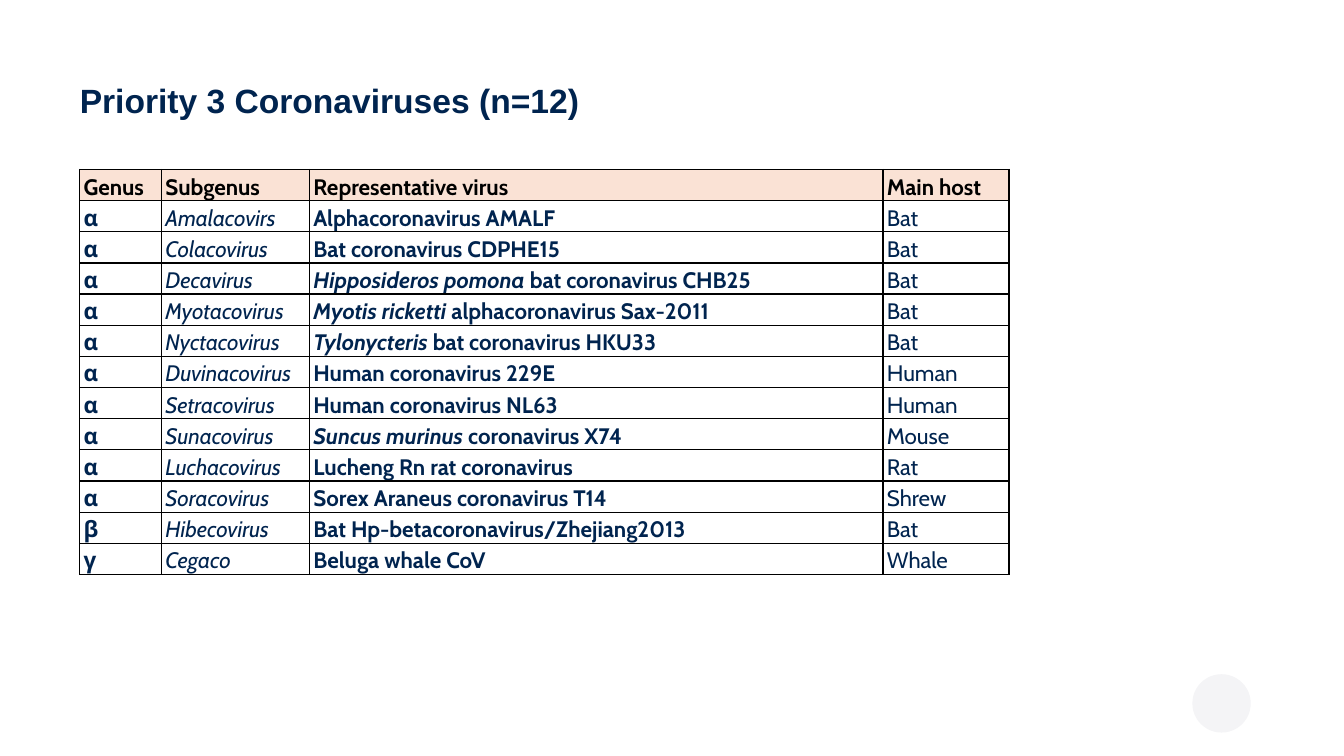
import pptx
import pptx.dml.color
import pptx.enum.shapes
import pptx.enum.text
import pptx.oxml
import pptx.oxml.ns
import pptx.util

Cm = pptx.util.Cm
Pt = pptx.util.Pt

NAVY = "00244F"
BLACK = "000000"
PEACH = "FAE2D5"
PALE_GREY = "F4F4F6"

COLUMN_WIDTHS = [2.06, 3.73, 14.45, 3.18]
HEADINGS = ["Genus", "Subgenus", "Representative virus", "Main host"]
VIRUSES = [
    ("α", "Amalacovirs", "", "Alphacoronavirus AMALF", "Bat"),
    ("α", "Colacovirus", "", "Bat coronavirus CDPHE15", "Bat"),
    ("α", "Decavirus", "Hipposideros pomona", " bat coronavirus CHB25", "Bat"),
    ("α", "Myotacovirus", "Myotis ricketti", " alphacoronavirus Sax-2011", "Bat"),
    ("α", "Nyctacovirus", "Tylonycteris", " bat coronavirus HKU33", "Bat"),
    ("α", "Duvinacovirus", "", "Human coronavirus 229E", "Human"),
    ("α", "Setracovirus", "", "Human coronavirus NL63", "Human"),
    ("α", "Sunacovirus", "Suncus murinus", " coronavirus X74", "Mouse"),
    ("α", "Luchacovirus", "", "Lucheng Rn rat coronavirus", "Rat"),
    ("α", "Soracovirus", "", "Sorex Araneus coronavirus T14", "Shrew"),
    ("β", "Hibecovirus", "", "Bat Hp-betacoronavirus/Zhejiang2013", "Bat"),
    ("γ", "Cegaco", "", "Beluga whale CoV", "Whale"),
]


def colour(value):
    return pptx.dml.color.RGBColor.from_string(value)


def write(para, text, font="Cabin", size=16, fill=NAVY, bold=False, italic=False):
    span = para.add_run()
    span.text = text
    span.font.name = font
    span.font.size = Pt(size)
    span.font.bold = bold
    span.font.italic = italic
    span.font.color.rgb = colour(fill)


class PageBuilder:
    border_colour = BLACK
    border_width = Pt(1)
    row_height = Cm(0.74)
    side_margin = Cm(0.1)

    def __init__(self, deck):
        self.page = deck.slides.add_slide(deck.slide_layouts[5])

    def title(self, text, left, top, width, height):
        box = self.page.shapes.title
        box.left, box.top, box.width, box.height = Cm(left), Cm(top), Cm(width), Cm(height)
        frame = box.text_frame
        frame.word_wrap = True
        frame.auto_size = pptx.enum.text.MSO_AUTO_SIZE.NONE
        frame.vertical_anchor = pptx.enum.text.MSO_ANCHOR.MIDDLE
        frame.margin_left = 0
        para = frame.paragraphs[0]
        para.alignment = pptx.enum.text.PP_ALIGN.LEFT
        para.line_spacing = 0.9
        para.space_after = Pt(6)
        write(para, text, font="Arial", size=24, bold=True)

    def circle(self, left, top, diameter, fill):
        kind = pptx.enum.shapes.MSO_SHAPE.OVAL
        shape = self.page.shapes.add_shape(kind, Cm(left), Cm(top), Cm(diameter), Cm(diameter))
        shape.shadow.inherit = False
        shape.fill.solid()
        shape.fill.fore_color.rgb = colour(fill)
        shape.line.fill.background()

    def table(self, left, top, column_widths, row_count):
        widths = [Cm(width) for width in column_widths]
        frame = self.page.shapes.add_table(
            row_count, len(widths), Cm(left), Cm(top), sum(widths), self.row_height * row_count
        )
        table = frame.table
        table.first_row = False
        table.horz_banding = False
        for column, width in zip(table.columns, widths):
            column.width = width
        for row in table.rows:
            row.height = self.row_height
        return table

    def cell(self, cell, fill=None):
        cell.margin_left = cell.margin_right = self.side_margin
        cell.margin_top = cell.margin_bottom = 0
        self.borders(cell)
        if fill:
            cell.fill.solid()
            cell.fill.fore_color.rgb = colour(fill)
        else:
            cell.fill.background()
        para = cell.text_frame.paragraphs[0]
        para.line_spacing = 1.15
        para.space_after = Pt(8)
        return para

    def borders(self, cell):
        properties = cell._tc.get_or_add_tcPr()
        for side in ("lnL", "lnR", "lnT", "lnB"):
            properties.append(pptx.oxml.parse_xml(
                f'<a:{side} {pptx.oxml.ns.nsdecls("a")} w="{self.border_width}">'
                f'<a:solidFill><a:srgbClr val="{self.border_colour}"/></a:solidFill></a:{side}>'
            ))


def main():
    deck = pptx.Presentation()
    deck.slide_width = Cm(33.87)
    deck.slide_height = Cm(19.05)
    builder = PageBuilder(deck)
    builder.circle(30.05, 16.99, 1.47, PALE_GREY)
    builder.title("Priority 3 Coronaviruses (n=12)", 2.01, 1.96, 29.21, 1.24)

    table = builder.table(2.01, 4.27, COLUMN_WIDTHS, len(VIRUSES) + 1)
    for column, heading in enumerate(HEADINGS):
        write(builder.cell(table.cell(0, column), PEACH), heading, fill=BLACK, bold=True)
    for row, (genus, subgenus, species, virus, host) in enumerate(VIRUSES, 1):
        paras = [builder.cell(table.cell(row, column)) for column in range(len(HEADINGS))]
        write(paras[0], genus, bold=True)
        write(paras[1], subgenus, italic=True)
        if species:
            write(paras[2], species, bold=True, italic=True)
        write(paras[2], virus, bold=True)
        write(paras[3], host)

    deck.save("out.pptx")


if __name__ == "__main__":
    main()
